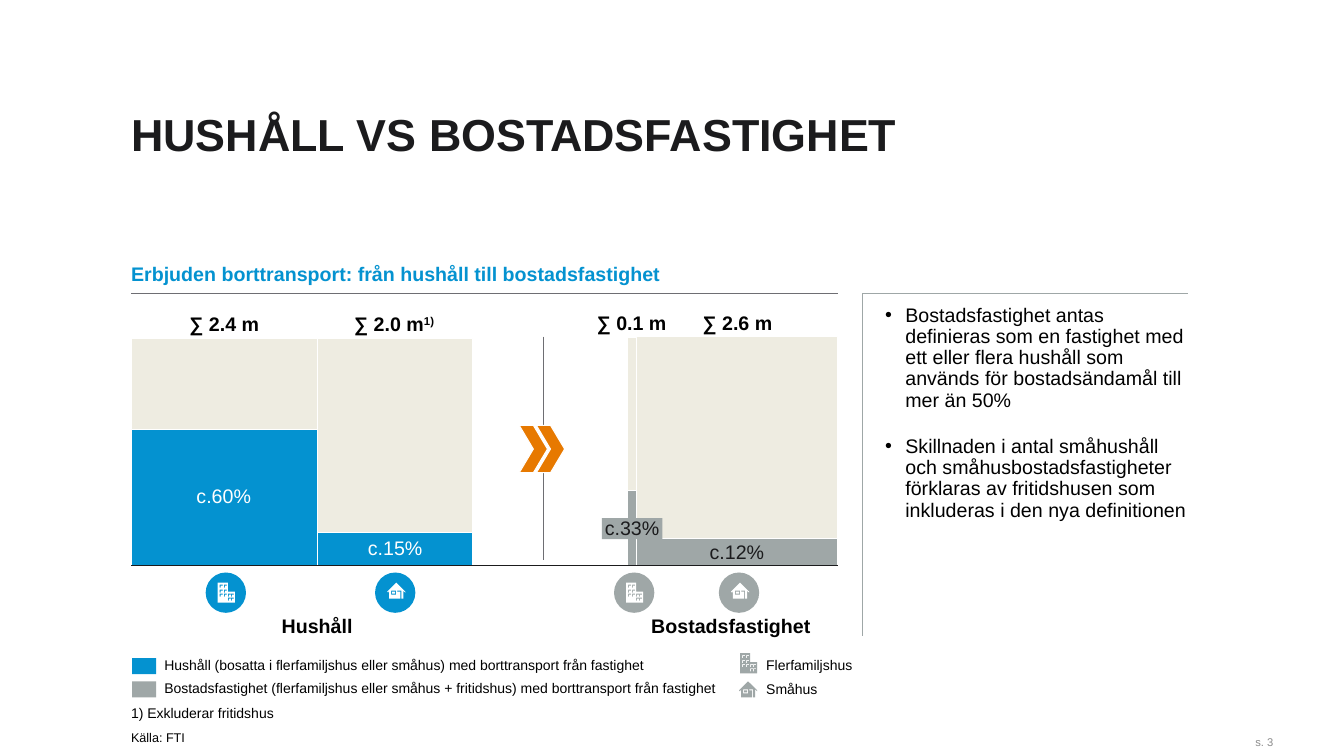
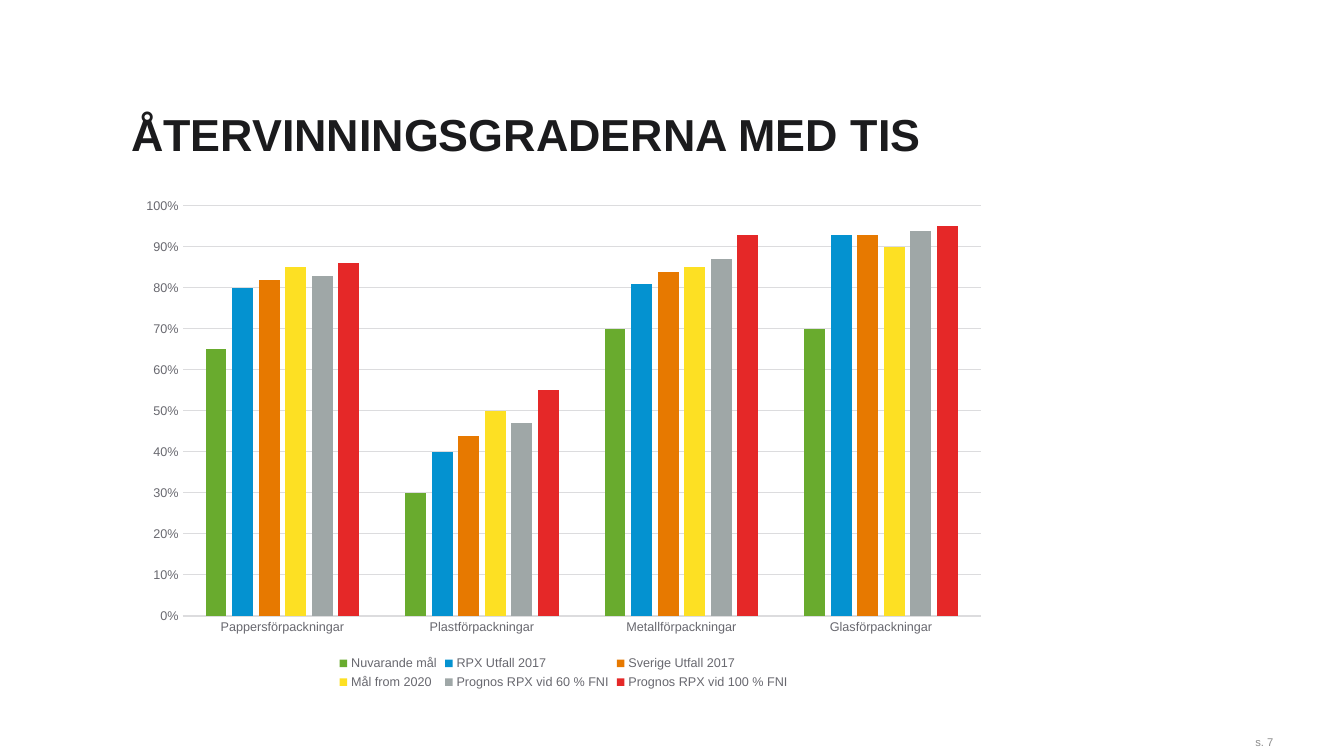
from lxml.etree import SubElement
from pptx import Presentation
from pptx.chart.data import CategoryChartData
from pptx.dml.color import RGBColor
from pptx.enum.chart import XL_CHART_TYPE, XL_LEGEND_POSITION, XL_TICK_MARK
from pptx.enum.shapes import MSO_CONNECTOR, MSO_SHAPE
from pptx.enum.text import MSO_ANCHOR, MSO_AUTO_SIZE, PP_ALIGN
from pptx.oxml.ns import qn
from pptx.util import Inches, Pt

FONT = "Arial"
BLUE, GREY, ORANGE, BEIGE = "0492D0", "9FA7A7", "E77900", "EEECE1"
GREEN, YELLOW, RED = "69AB2E", "FDE023", "E52828"
INK, BLACK, WHITE = "1B1B1D", "000000", "FFFFFF"
RULE, AXIS_TEXT, GRID, PAGE_NUMBER = "6E6E73", "68686F", "DCDCDE", "8C8C8C"
MARGIN, BASELINE, CHART_RIGHT = 1.3, 5.61, 8.31


def colour(value):
    return RGBColor.from_string(value)


def inches(*values):
    return [Inches(value) for value in values]


def style_font(font, size, value, bold=False):
    font.name = FONT
    font.size = Pt(size)
    font.bold = bold
    font.color.rgb = colour(value)


def style_shape(shape, fill=None, line=None):
    shape.shadow.inherit = False
    if fill:
        shape.fill.solid()
        shape.fill.fore_color.rgb = colour(fill)
    else:
        shape.fill.background()
    if line:
        shape.line.color.rgb = colour(line)
        shape.line.width = Pt(0.75)
    else:
        shape.line.fill.background()


def add_bullet(para):
    properties = para._p.get_or_add_pPr()
    properties.set("marL", str(Inches(0.2)))
    properties.set("indent", str(Inches(-0.2)))
    bullet_colour = SubElement(properties, qn("a:buClr"))
    SubElement(bullet_colour, qn("a:srgbClr")).set("val", BLACK)
    SubElement(properties, qn("a:buFont")).set("typeface", FONT)
    SubElement(properties, qn("a:buChar")).set("char", "•")


def write_text(frame, text, size=14, value=BLACK, bold=False, align=PP_ALIGN.LEFT,
               anchor=MSO_ANCHOR.TOP, spacing=0.9, wrap=True, inset=0,
               raised="", bullets=False, space_before=0):
    frame.auto_size = MSO_AUTO_SIZE.NONE
    frame.word_wrap = wrap
    frame.vertical_anchor = anchor
    frame.margin_left = frame.margin_right = Inches(inset)
    frame.margin_top = frame.margin_bottom = 0
    for index, content in enumerate(text.split("\n")):
        para = frame.add_paragraph() if index else frame.paragraphs[0]
        para.alignment = align
        para.line_spacing = spacing
        para.space_before = Pt(space_before if index else 0)
        if bullets:
            add_bullet(para)
        span = para.add_run()
        span.text = content
        style_font(span.font, size, value, bold)
    if raised:
        span = para.add_run()
        span.text = raised
        style_font(span.font, size, value, bold)
        span._r.get_or_add_rPr().set("baseline", "30000")


def add_text(page, text, left, top, width, height, fill=None, **text_format):
    box = page.shapes.add_textbox(*inches(left, top, width, height))
    if fill:
        box.fill.solid()
        box.fill.fore_color.rgb = colour(fill)
    write_text(box.text_frame, text, **text_format)


def add_shape(page, kind, left, top, width, height, fill, line=None):
    shape = page.shapes.add_shape(kind, *inches(left, top, width, height))
    style_shape(shape, fill, line)


def add_line(page, x1, y1, x2, y2, value):
    line = page.shapes.add_connector(MSO_CONNECTOR.STRAIGHT, *inches(x1, y1, x2, y2))
    line.line.color.rgb = colour(value)
    line.line.width = Pt(0.75)
    SubElement(line._element.spPr, qn("a:effectLst"))


def add_outline(page, left, top, contours, fill=None, line=None, close=True):
    def place(points):
        return [(Inches(left + x), Inches(top + y)) for x, y in points]

    first, *others = [place(points) for points in contours]
    builder = page.shapes.build_freeform(*first[0])
    builder.add_line_segments(first[1:], close=close)
    for points in others:
        builder.move_to(*points[0])
        builder.add_line_segments(points[1:], close=close)
    style_shape(builder.convert_to_shape(), fill, line)


def rectangle(x, y, width, height):
    return [(x, y), (x + width, y), (x + width, y + height), (x, y + height)]


def window(x, y):
    corners = [(0, 0.03), (0.01, 0.03), (0.01, 0.01), (0.03, 0.01), (0.03, 0), (0, 0)]
    return [(x + dx, y + dy) for dx, dy in corners]


def add_apartments(page, left, top, fill):
    walls = [(0, 0.2), (0, 0), (0.1, 0), (0.1, 0.09), (0.17, 0.09), (0.17, 0.2)]
    windows = [window(x, y) for x in (0.02, 0.06) for y in (0.02, 0.07, 0.11)]
    windows += [window(x, y) for x in (0.1, 0.13) for y in (0.11, 0.15)]
    add_outline(page, left, top, [walls] + windows, fill)


def add_house(page, left, top, fill):
    walls = [(0.02, 0.16), (0.02, 0.08), (0.01, 0.1), (0, 0.09), (0.09, 0),
             (0.18, 0.09), (0.18, 0.1), (0.16, 0.08), (0.16, 0.16), (0.14, 0.16),
             (0.14, 0.08), (0.1, 0.08), (0.1, 0.16)]
    frame = rectangle(0.04, 0.08, 0.05, 0.04)
    pane = rectangle(0.05, 0.09, 0.03, 0.02)
    door = rectangle(0.1, 0.09, 0.03, 0.07)
    add_outline(page, left, top, [walls, frame, pane, door], fill)


def add_badge(page, left, icon, fill):
    add_shape(page, MSO_SHAPE.OVAL, left, 5.68, 0.4, 0.4, fill)
    icon(page, left + 0.12, 5.78, WHITE)


def add_column(page, left, top, width, split, fill):
    for start, end, value in ((split, BASELINE, fill), (top, split, BEIGE)):
        add_shape(page, MSO_SHAPE.RECTANGLE, left, start, width, end - start, value, WHITE)


def add_titled_page(deck, title, number):
    page = deck.slides.add_slide(deck.slide_layouts[5])
    heading = page.shapes.title
    heading.left, heading.top, heading.width, heading.height = inches(MARGIN, 1.01, 10.49, 0.63)
    write_text(heading.text_frame, title, size=32, value=INK, bold=True,
               anchor=MSO_ANCHOR.MIDDLE, spacing=1.0)
    add_text(page, f"s. {number}", 11.3, 7.21, 1.43, 0.3, size=8, value=PAGE_NUMBER,
             align=PP_ALIGN.RIGHT, anchor=MSO_ANCHOR.MIDDLE, inset=0.1, spacing=1.0)
    return page


def add_mosaic(page):
    for column in (
        (6.31, 3.34, 2, 5.34, GREY),
        (6.22, 3.35, 0.09, 4.87, GREY),
        (3.15, 3.36, 1.54, 5.28, BLUE),
        (MARGIN, 3.36, 1.85, 4.26, BLUE),
    ):
        add_column(page, *column)
    add_line(page, MARGIN, BASELINE, CHART_RIGHT, BASELINE, INK)

    for text, left, top, value, fill in (
        ("c.60%", 1.92, 4.83, WHITE, None),
        ("c.33%", 5.97, 5.14, INK, GREY),
        ("c.15%", 3.62, 5.34, WHITE, None),
        ("c.12%", 7.01, 5.38, INK, None),
    ):
        add_text(page, text, left, top, 0.6, 0.21, fill, value=value, wrap=False,
                 align=PP_ALIGN.CENTER, anchor=MSO_ANCHOR.MIDDLE, inset=0.03)
    for text, left, top, width, raised in (
        ("∑ 2.4 m", 1.85, 3.12, 0.75, ""),
        ("∑ 2.0 m", 3.48, 3.12, 0.86, "1)"),
        ("∑ 0.1 m", 5.89, 3.11, 0.75, ""),
        ("∑ 2.6 m", 6.94, 3.11, 0.75, ""),
    ):
        add_text(page, text, left, top, width, 0.21, bold=True, raised=raised, wrap=False,
                 align=PP_ALIGN.CENTER, anchor=MSO_ANCHOR.BOTTOM, inset=0.03)
    for text, left, width in (("Hushåll", 2.79, 0.71), ("Bostadsfastighet", 6.46, 1.58)):
        add_text(page, text, left, 6.09, width, 0.24, bold=True, wrap=False,
                 align=PP_ALIGN.CENTER, spacing=1.0)
    for left, icon, fill in (
        (2.04, add_apartments, BLUE),
        (3.72, add_house, BLUE),
        (6.09, add_apartments, GREY),
        (7.13, add_house, GREY),
    ):
        add_badge(page, left, icon, fill)


def add_transition(page):
    add_line(page, 5.39, 3.34, 5.39, 5.56, RULE)
    add_shape(page, MSO_SHAPE.RECTANGLE, 5.23, 4.28, 0.4, 0.35, WHITE)
    for left in (5.15, 5.32):
        add_shape(page, MSO_SHAPE.CHEVRON, left, 4.22, 0.28, 0.47, ORANGE, WHITE)


def add_key(page):
    for text, top, fill in (
        ("Hushåll (bosatta i flerfamiljshus eller småhus) med borttransport från fastighet",
         6.53, BLUE),
        ("Bostadsfastighet (flerfamiljshus eller småhus + fritidshus) med borttransport "
         "från fastighet", 6.76, GREY),
    ):
        add_shape(page, MSO_SHAPE.RECTANGLE, 1.31, top, 0.24, 0.16, fill)
        add_text(page, text, 1.63, top, 5.51, 0.15, size=10, wrap=False)
    add_apartments(page, 7.34, 6.48, GREY)
    add_house(page, 7.33, 6.76, GREY)
    for text, top in (("Flerfamiljshus", 6.53), ("Småhus", 6.77)):
        add_text(page, text, 7.6, top, 0.86, 0.15, size=10, wrap=False)
    add_text(page, "1) Exkluderar fritidshus", MARGIN, 7.01, 9.33, 0.15, size=10,
             anchor=MSO_ANCHOR.BOTTOM)
    add_text(page, "Källa: FTI", MARGIN, 7.25, 0.54, 0.14, size=9, wrap=False,
             anchor=MSO_ANCHOR.BOTTOM)


def add_households_page(deck):
    page = add_titled_page(deck, "HUSHÅLL VS BOSTADSFASTIGHET", 3)
    add_text(page, "Erbjuden borttransport: från hushåll till bostadsfastighet",
             MARGIN, 2.62, 6.59, 0.26, value=BLUE, bold=True, spacing=0.95)
    add_line(page, MARGIN, 2.91, CHART_RIGHT, 2.91, RULE)
    add_mosaic(page)
    add_transition(page)
    add_key(page)
    add_outline(page, 8.55, 2.91, [[(3.23, 0), (0, 0), (0, 3.4)]], line=GREY, close=False)
    add_text(page,
             "Bostadsfastighet antas definieras som en fastighet med ett eller flera hushåll "
             "som används för bostadsändamål till mer än 50%\n"
             "Skillnaden i antal småhushåll och småhusbostadsfastigheter förklaras av "
             "fritidshusen som inkluderas i den nya definitionen",
             8.78, 3.03, 3, 2.16, bullets=True, space_before=18)


def add_recycling_chart(page):
    series_rows = (
        ("Nuvarande mål", GREEN, (0.65, 0.3, 0.7, 0.7)),
        ("RPX Utfall 2017", BLUE, (0.8, 0.4, 0.81, 0.93)),
        ("Sverige Utfall 2017", ORANGE, (0.82, 0.44, 0.84, 0.93)),
        ("Mål from 2020", YELLOW, (0.85, 0.5, 0.85, 0.9)),
        ("Prognos RPX vid 60 % FNI", GREY, (0.83, 0.47, 0.87, 0.94)),
        ("Prognos RPX vid 100 % FNI", RED, (0.86, 0.55, 0.93, 0.95)),
    )
    data = CategoryChartData(number_format="0%")
    data.categories = ["Pappersförpackningar", "Plastförpackningar",
                       "Metallförpackningar", "Glasförpackningar"]
    for name, _, values in series_rows:
        data.add_series(name, values)
    chart = page.shapes.add_chart(XL_CHART_TYPE.COLUMN_CLUSTERED,
                                  *inches(1.28, 1.87, 8.62, 5.01), data).chart
    style_font(chart.font, 10, INK)
    chart.has_title = False
    chart.has_legend = True
    chart.legend.position = XL_LEGEND_POSITION.BOTTOM
    chart.legend.include_in_layout = False
    style_font(chart.legend.font, 9, AXIS_TEXT)

    plot = chart.plots[0]
    plot.vary_by_categories = False
    plot.gap_width = 219
    plot.overlap = -27
    for series, (_, value, _) in zip(plot.series, series_rows):
        series.format.fill.solid()
        series.format.fill.fore_color.rgb = colour(value)

    scale = chart.value_axis
    scale.minimum_scale, scale.maximum_scale, scale.major_unit = 0, 1, 0.1
    scale.tick_labels.number_format = "0%"
    scale.tick_labels.number_format_is_linked = False
    scale.format.line.fill.background()
    for axis in (chart.category_axis, scale):
        axis.major_tick_mark = axis.minor_tick_mark = XL_TICK_MARK.NONE
        style_font(axis.tick_labels.font, 9, AXIS_TEXT)
    for line in (chart.category_axis.format.line, scale.major_gridlines.format.line):
        line.color.rgb = colour(GRID)
        line.width = Pt(0.75)


def main():
    deck = Presentation()
    deck.slide_width, deck.slide_height = inches(13.33, 7.5)
    add_households_page(deck)
    add_recycling_chart(add_titled_page(deck, "ÅTERVINNINGSGRADERNA MED TIS", 7))
    deck.save("out.pptx")


if __name__ == "__main__":
    main()
